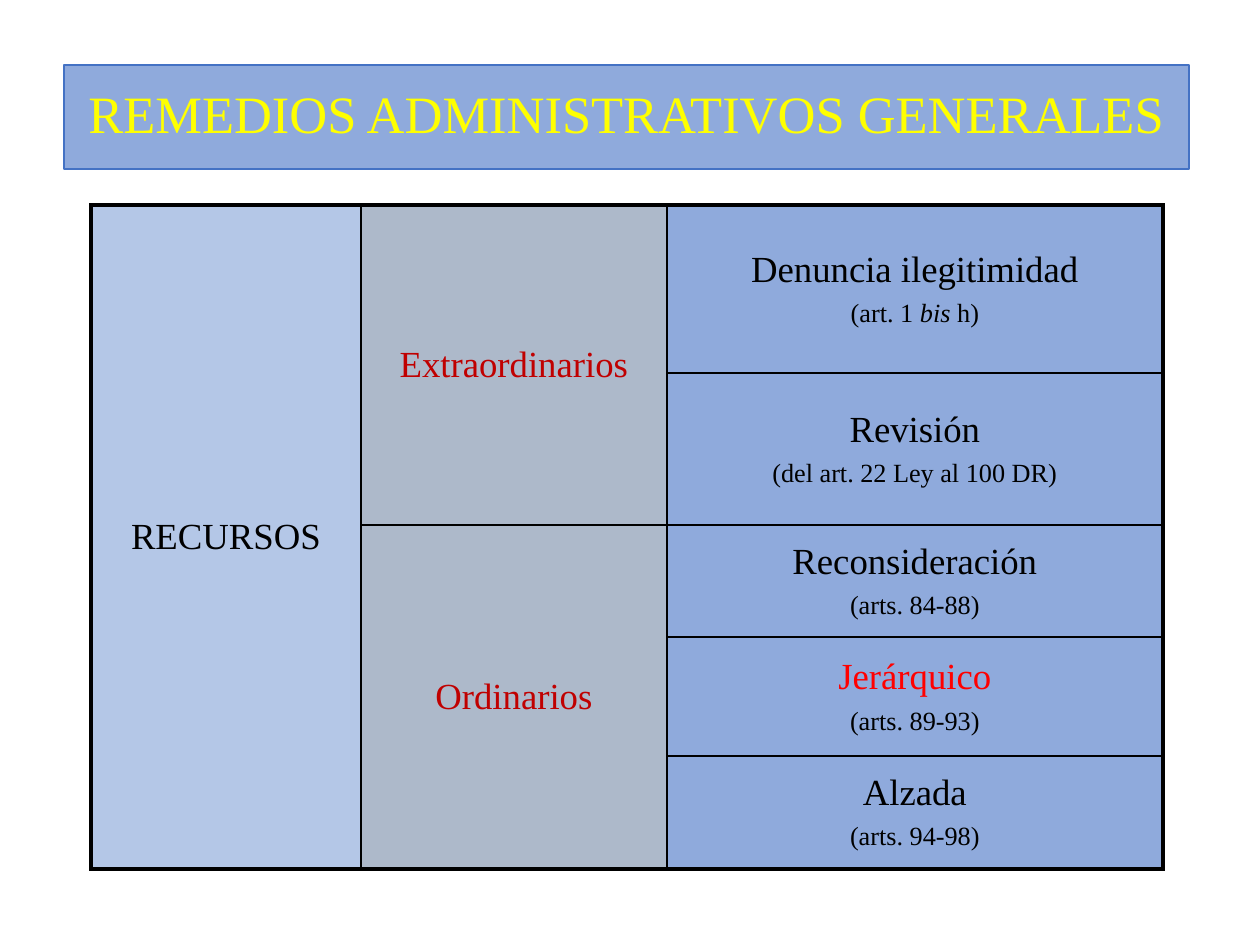
from lxml import etree
from pptx import Presentation
from pptx.dml.color import RGBColor
from pptx.enum.shapes import MSO_SHAPE
from pptx.enum.text import MSO_ANCHOR, PP_ALIGN
from pptx.oxml.ns import qn
from pptx.util import Emu, Pt

RECT = MSO_SHAPE.RECTANGLE
MIDDLE = MSO_ANCHOR.MIDDLE
CENTER = PP_ALIGN.CENTER
SCALE = 914400 / 126
FONT = "Times New Roman"
HEX = {
    "blue": "8FAADC", "pale": "B4C7E7", "gray": "ADB9CA", "edge": "4472C4",
    "black": "000000", "dark": "C00000", "red": "FF0000", "yellow": "FFFF00",
}
COLS = [270, 306, 496]
ROWS = [168, 152, 112, 119, 113]
CELLS = [
    (0, 0, 5, "pale", "black", "RECURSOS", []),
    (0, 1, 2, "gray", "dark", "Extraordinarios", []),
    (2, 1, 3, "gray", "dark", "Ordinarios", []),
    (0, 2, 1, "blue", "black", "Denuncia ilegitimidad", ["(art. 1 ", "bis", " h)"]),
    (1, 2, 1, "blue", "black", "Revisión", ["(del art. 22 Ley al 100 DR)"]),
    (2, 2, 1, "blue", "black", "Reconsideración", ["(arts. 84-88)"]),
    (3, 2, 1, "blue", "red", "Jerárquico", ["(arts. 89-93)"]),
    (4, 2, 1, "blue", "black", "Alzada", ["(arts. 94-98)"]),
]


def px(num):
    return Emu(round(num * SCALE))


def color(name):
    return RGBColor.from_string(HEX[name])


def style(para, size, name):
    para.alignment = CENTER
    para.font.name = FONT
    para.font.size = Pt(size)
    para.font.color.rgb = color(name)


def title(slide, left, top, width, height):
    bar = slide.shapes.add_shape(RECT, px(left), px(top), px(width), px(height))
    bar.shadow.inherit = False
    bar.fill.solid()
    bar.fill.fore_color.rgb = color("blue")
    bar.line.color.rgb = color("edge")
    bar.line.width = Pt(0.75)
    frame = bar.text_frame
    frame.word_wrap = True
    frame.vertical_anchor = MIDDLE
    para = frame.paragraphs[0]
    para.text = "REMEDIOS ADMINISTRATIVOS GENERALES"
    para.line_spacing = 0.9
    style(para, 30, "yellow")


def border(cell, outer):
    props = cell._tc.get_or_add_tcPr()
    for index, side in enumerate("LRTB"):
        width = Pt(2.25) if side in outer else Pt(1)
        line = etree.Element(qn("a:ln" + side), w=str(width))
        fill = etree.SubElement(line, qn("a:solidFill"))
        etree.SubElement(fill, qn("a:srgbClr"), val=HEX["black"])
        props.insert(index, line)


def write(cell, head, tint, note):
    frame = cell.text_frame
    para = frame.paragraphs[0]
    para.text = head
    style(para, 21, tint)
    if note:
        para = frame.add_paragraph()
        para.space_before = Pt(5)
        style(para, 15, "black")
        for part in note:
            run = para.add_run()
            run.text = part
            if part == "bis":
                run.font.italic = True


def grid(slide, left, top):
    shape = slide.shapes.add_table(
        len(ROWS), len(COLS), px(left), px(top), px(sum(COLS)), px(sum(ROWS)))
    table = shape.table
    table.first_row = False
    table.horz_banding = False
    for col, width in zip(table.columns, COLS):
        col.width = px(width)
    for row, height in zip(table.rows, ROWS):
        row.height = px(height)
    for row, col, span, fill, tint, head, note in CELLS:
        cell = table.cell(row, col)
        if span > 1:
            cell.merge(table.cell(row + span - 1, col))
        edges = {
            "L": col == 0, "R": col == len(COLS) - 1,
            "T": row == 0, "B": row + span == len(ROWS),
        }
        border(cell, [side for side, outer in edges.items() if outer])
        cell.fill.solid()
        cell.fill.fore_color.rgb = color(fill)
        cell.vertical_anchor = MIDDLE
        cell.margin_left = cell.margin_right = px(9)
        cell.margin_top = cell.margin_bottom = px(5)
        write(cell, head, tint, note)


def main():
    deck = Presentation()
    deck.slide_width = px(1260)
    deck.slide_height = px(945)
    slide = deck.slides.add_slide(deck.slide_layouts[6])
    title(slide, 64, 65, 1125, 104)
    grid(slide, 91, 205)
    deck.save("out.pptx")


if __name__ == "__main__":
    main()
